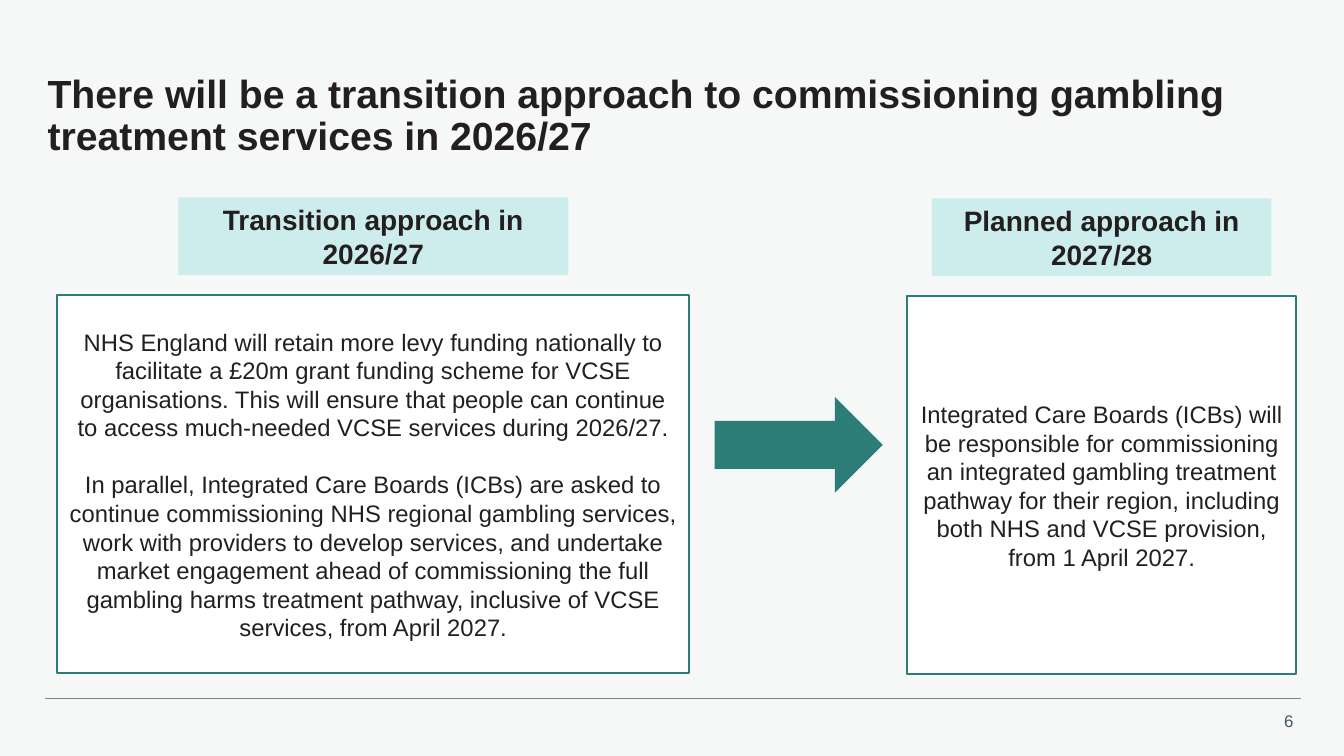
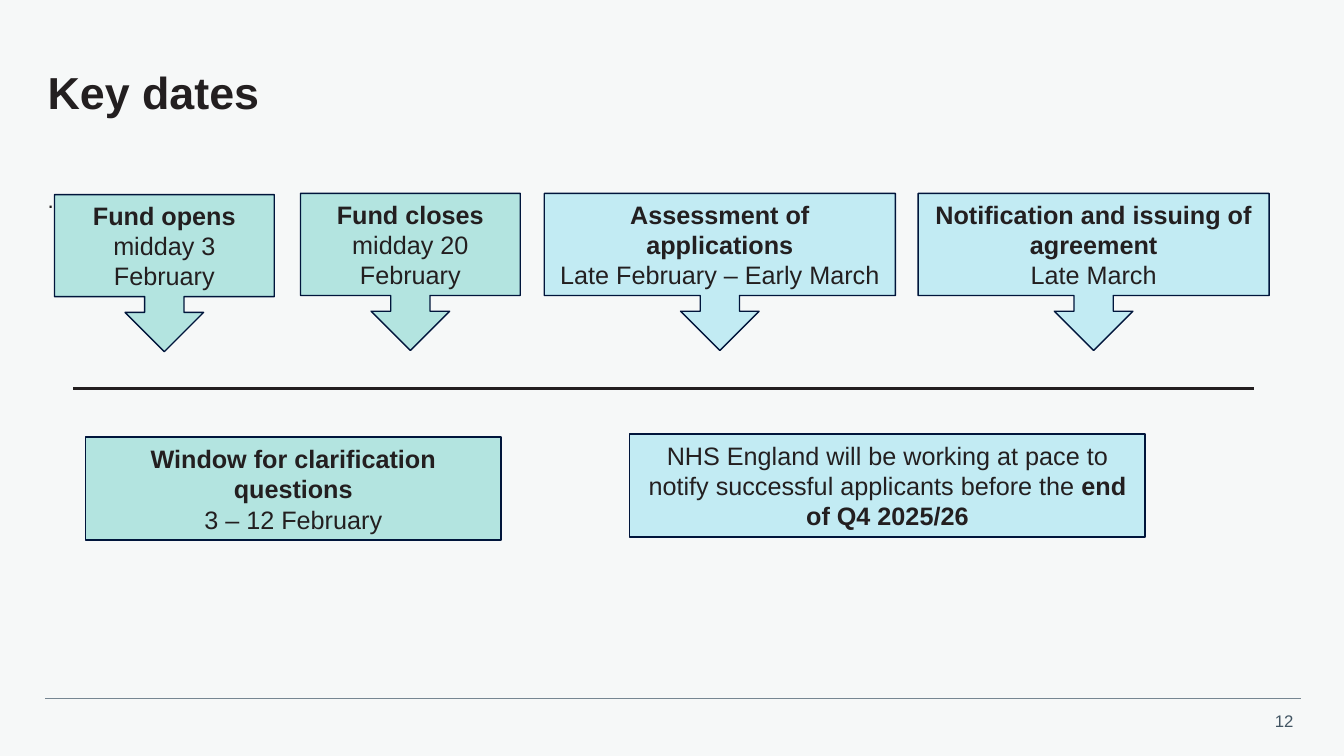
import pptx
import pptx.dml.color
import pptx.enum.shapes
import pptx.enum.text
import pptx.oxml.ns
import pptx.util
from lxml import etree

Pt = pptx.util.Pt
RGBColor = pptx.dml.color.RGBColor
Shape = pptx.enum.shapes.MSO_SHAPE
Align = pptx.enum.text.PP_ALIGN
Anchor = pptx.enum.text.MSO_ANCHOR

INK = RGBColor(0x23, 0x1F, 0x20)
PAPER = RGBColor(0xF6, 0xF8, 0xF8)
WHITE = RGBColor(0xFF, 0xFF, 0xFF)
TEAL = RGBColor(0x2C, 0x7D, 0x77)
PALE_TEAL = RGBColor(0xCC, 0xED, 0xEB)
MINT = RGBColor(0xB3, 0xE4, 0xE0)
SKY = RGBColor(0xC2, 0xEB, 0xF3)
NAVY = RGBColor(0x00, 0x15, 0x3B)
SLATE = RGBColor(0x42, 0x55, 0x63)
RULE = RGBColor(0x76, 0x86, 0x92)


def write_text(frame, paragraphs, size=18, color=INK, bold=False, align=Align.CENTER,
               anchor=Anchor.MIDDLE, margin=None, gap=0, spacing=None):
    frame.word_wrap = True
    frame.auto_size = pptx.enum.text.MSO_AUTO_SIZE.NONE
    frame.vertical_anchor = anchor
    if margin is not None:
        frame.margin_left = frame.margin_right = Pt(margin)
        frame.margin_top = frame.margin_bottom = Pt(margin)
    for index, runs in enumerate(paragraphs):
        paragraph = frame.add_paragraph() if index else frame.paragraphs[0]
        paragraph.alignment = align
        paragraph.space_before = Pt(gap if index else 0)
        if spacing:
            paragraph.line_spacing = spacing
        for words, strong in [(runs, bold)] if isinstance(runs, str) else runs:
            run = paragraph.add_run()
            run.text = words
            run.font.name = "Arial"
            run.font.size = Pt(size)
            run.font.bold = strong
            run.font.color.rgb = color


class Deck:
    def __init__(self):
        self.presentation = pptx.Presentation()
        self.presentation.slide_width = Pt(960)
        self.presentation.slide_height = Pt(540)
        background = self.presentation.slide_master.background.fill
        background.solid()
        background.fore_color.rgb = PAPER
        self.slide = None

    def start(self, title, number, top, size):
        self.slide = self.presentation.slides.add_slide(self.presentation.slide_layouts[5])
        heading = self.slide.shapes.title
        heading.left, heading.top, heading.width, heading.height = Pt(34), Pt(top), Pt(900), Pt(68.4)
        write_text(heading.text_frame, [title], size=size, bold=True, align=Align.LEFT,
                   margin=0, spacing=0.9)
        self.line(32.4, 929.6, 498.9, RULE, 0.5)
        self.text(880, 504, 51, 21.6, [number], size=12, color=SLATE,
                  align=Align.RIGHT, anchor=Anchor.TOP)

    def text(self, left, top, width, height, paragraphs, **style):
        box = self.slide.shapes.add_textbox(Pt(left), Pt(top), Pt(width), Pt(height))
        write_text(box.text_frame, paragraphs, **style)

    def line(self, start, end, y, color, weight):
        rule = self.slide.shapes.add_connector(
            pptx.enum.shapes.MSO_CONNECTOR.STRAIGHT, Pt(start), Pt(y), Pt(end), Pt(y))
        rule.line.color.rgb = color
        rule.line.width = Pt(weight)
        etree.SubElement(rule._element.spPr, pptx.oxml.ns.qn("a:effectLst"))

    def panel(self, left, top, width, height, fill, paragraphs=(), kind=Shape.RECTANGLE,
              outline=None, weight=1, **style):
        panel = self.slide.shapes.add_shape(kind, Pt(left), Pt(top), Pt(width), Pt(height))
        panel.shadow.inherit = False
        panel.fill.solid()
        panel.fill.fore_color.rgb = fill
        if outline is None:
            panel.line.fill.background()
        else:
            panel.line.color.rgb = outline
            panel.line.width = Pt(weight)
        write_text(panel.text_frame, paragraphs, **style)

    def approach(self, center, top, heading, heading_width, body, body_width):
        self.panel(center - heading_width / 2, top - 70, heading_width, 55.4, PALE_TEAL,
                   [heading], size=20, bold=True)
        self.panel(center - body_width / 2, top, body_width, 270, WHITE, body,
                   outline=TEAL, weight=1.5, size=17, gap=20.4)


def transition_slide(deck):
    deck.start("There will be a transition approach to commissioning gambling "
               "treatment services in 2026/27", "6", top=49, size=28)
    deck.panel(510.4, 283.6, 120.2, 68.4, TEAL, kind=Shape.RIGHT_ARROW)
    deck.approach(787, 211.7, "Planned approach in 2027/28", 242.6, [
        "Integrated Care Boards (ICBs) will be responsible for commissioning an integrated "
        "gambling treatment pathway for their region, including both NHS and VCSE provision, "
        "from 1 April 2027."], 278)
    deck.approach(266.7, 211, "Transition approach in 2026/27", 278.6, [
        "NHS England will retain more levy funding nationally to facilitate a £20m grant "
        "funding scheme for VCSE organisations. This will ensure that people can continue to "
        "access much-needed VCSE services during 2026/27.",
        "In parallel, Integrated Care Boards (ICBs) are asked to continue commissioning NHS "
        "regional gambling services, work with providers to develop services, and undertake "
        "market engagement ahead of commissioning the full gambling harms treatment pathway, "
        "inclusive of VCSE services, from April 2027."], 451.4)


def dates_slide(deck):
    deck.start("Key dates", "12", top=34, size=32)
    deck.text(34, 133.2, 887, 347.8, ["."], size=16, align=Align.LEFT,
              anchor=Anchor.TOP, margin=0)
    deck.line(52.4, 895.7, 277.4, INK, 2.25)
    milestones = [
        (38.9, 139, 157, MINT, "Fund opens", "midday 3 February"),
        (214.6, 138.2, 157, MINT, "Fund closes", "midday 20 February"),
        (388.8, 138.2, 250.8, SKY, "Assessment of applications", "Late February – Early March"),
        (655.8, 138.2, 250.8, SKY, "Notification and issuing of agreement", "Late March"),
    ]
    for left, top, width, fill, event, date in milestones:
        deck.panel(left, top, width, 112.2, fill, [[(event, True)], [(date, False)]],
                   kind=Shape.DOWN_ARROW_CALLOUT, outline=NAVY)
    notes = [
        (61, 312.3, 297, MINT,
         [[("Window for clarification questions", True)], "3 – 12 February"]),
        (449.9, 310.1, 368, SKY,
         [[("NHS England will be working at pace to notify successful applicants before the ",
            False), ("end of Q4 2025/26", True)]]),
    ]
    for left, top, width, fill, paragraphs in notes:
        deck.panel(left, top, width, 73.6, fill, paragraphs, outline=NAVY)


def main():
    deck = Deck()
    transition_slide(deck)
    dates_slide(deck)
    deck.presentation.save("out.pptx")


if __name__ == "__main__":
    main()
